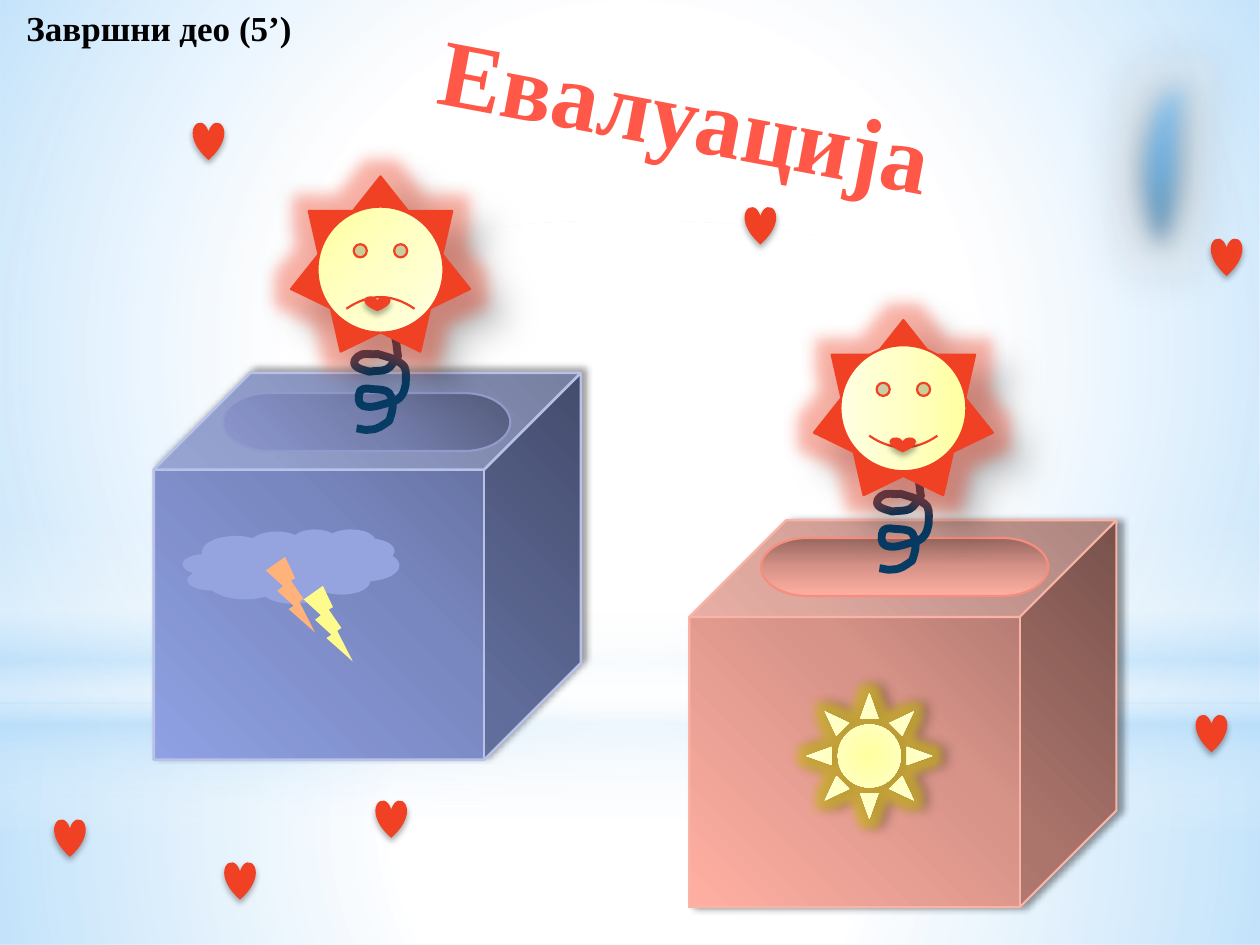
"""Build the evaluation slide: two jack-in-the-box toys, hearts and a title."""
from dataclasses import dataclass
from typing import Optional, Union

from lxml import etree
from pptx import Presentation
from pptx.dml.color import RGBColor
from pptx.enum.shapes import MSO_SHAPE
from pptx.enum.text import MSO_AUTO_SIZE, PP_ALIGN
from pptx.oxml.ns import nsdecls, qn
from pptx.util import Emu, Inches, Pt

RECTANGLE, OVAL, CUBE = MSO_SHAPE.RECTANGLE, MSO_SHAPE.OVAL, MSO_SHAPE.CUBE
SLOT, STAR, FACE = MSO_SHAPE.FLOWCHART_TERMINATOR, MSO_SHAPE.STAR_7_POINT, MSO_SHAPE.SMILEY_FACE
SUN, CLOUD, BOLT = MSO_SHAPE.SUN, MSO_SHAPE.CLOUD, MSO_SHAPE.LIGHTNING_BOLT
HEART, TEAR = MSO_SHAPE.HEART, MSO_SHAPE.TEAR
CENTER, LEFT = PP_ALIGN.CENTER, PP_ALIGN.LEFT
FIT_SHAPE = MSO_AUTO_SIZE.SHAPE_TO_FIT_TEXT
SLIDE_WIDTH, SLIDE_HEIGHT = Inches(10), Inches(7.5)
COLUMNS, ROWS = 100, 75


@dataclass(frozen=True)
class Gradient:
    """Stops of position, colour and optional opacity; no angle means radial."""
    stops: tuple
    angle: Optional[int] = None


@dataclass(frozen=True)
class Effects:
    """Shadow (opacity, blur, distance, direction), glow (colour, opacity, radius), soft edge."""
    shadow: Optional[tuple] = None
    glow: Optional[tuple] = None
    soft_edge: float = 0


@dataclass(frozen=True)
class Part:
    """One preset shape placed at column, row, width and height of the grid."""
    kind: int
    at: tuple
    fill: Union[str, Gradient]
    line: Optional[tuple] = None
    effects: Effects = Effects()
    adjustment: Optional[float] = None


@dataclass(frozen=True)
class Label:
    """One text box with its text, place, indent in columns and formats."""
    text: str
    at: tuple
    indent: float
    alignment: int
    color: Union[str, Gradient]
    font: dict
    rotation: float = 0


def ramp(colors: tuple, angle: Optional[int] = None) -> Gradient:
    """Spread colours evenly over a gradient."""
    step = 100 / (len(colors) - 1)
    return Gradient(tuple((step * index, color) for index, color in enumerate(colors)), angle)


@dataclass(frozen=True)
class Theme:
    """Colours, type formats and effects of the slide."""
    red: str = "F14124"
    navy: str = "073C65"
    black: str = "000000"
    white: str = "FFFFFF"
    sky: str = "B4DCFA"
    yellow: tuple = ("FFFFA0", "FFFFC5", "FFFFE3")
    blue_box: tuple = ("555F87", "7987C0", "8FA1E3")
    pink_box: tuple = ("976760", "D79388", "FFAFA2")
    blue_slot: tuple = ("535A7A", "7680AE", "8C97CF")
    tear: tuple = ("4E7897", "6FABD7", "84CAFF")
    title: tuple = ("FF6155", "FF5748", "EF3718", "FF5748", "FF6155")
    title_font = {"name": "Times New Roman", "size": Pt(54), "bold": True}
    header_font = {"name": "Times New Roman", "size": Pt(20), "bold": True}
    outline: float = 1.25
    spring_width: float = 4.5
    heart_effects: Effects = Effects((32, 3.5, 2.2, 90))
    star_effects: Effects = Effects((30, 15, 18, 45), ("F14124", 40, 18))
    sun_effects: Effects = Effects((40, 4, 3, 0), ("D4B928", 70, 10))
    tear_effects: Effects = Effects((43, 25, 0, 45), ("FFFFFF", 15, 15), 12.5)


THEME = Theme()
W, S = THEME.white, THEME.sky
RED_LINE = (THEME.red, THEME.outline)

BACKGROUND = (
    Part(RECTANGLE, (0, 55.8, 100, 19.2), Gradient(((0, W, 91), (37, W, 76), (100, S, 79)))),
    Part(RECTANGLE, (0, 0, 100, 55.8), Gradient(((0, W, 89), (48, W, 62), (100, S, 79)))),
    Part(RECTANGLE, (0, 41.2, 100, 25), Gradient(
        ((0, W, 0), (29, W, 30), (45, S, 40), (55, W, 26), (65, S, 60), (100, W, 0)), 90)),
    Part(OVAL, (0, 17.5, 100, 55.8), Gradient(((0, W, 100), (56, W, 0)))),
)
BOXES = (
    Part(CUBE, (12.2, 29.6, 33.9, 30.7), ramp(THEME.blue_box, 135), ("B8C2E9", 1.5),
         Effects((40, 4, 3, 315))),
    Part(CUBE, (54.7, 41.3, 33.9, 30.7), ramp(THEME.pink_box, 135), ("F9B3A7", THEME.outline),
         Effects((40, 4, 3, 0))),
    Part(SLOT, (60.4, 42.7, 22.8, 4.6), ramp(THEME.pink_box, 90), ("F78D7C", THEME.outline)),
    Part(SLOT, (17.7, 31.2, 22.8, 4.6), ramp(THEME.blue_slot, 135), ("919ACA", THEME.outline)),
)
FIGURES = (
    *(Part(STAR, (column, row, 14.2, 13.9), THEME.red, RED_LINE, THEME.star_effects)
      for column, row in ((23.1, 14), (64.6, 25.4))),
    Part(FACE, (25.2, 16.4, 10, 10), ramp(THEME.yellow, 45), RED_LINE, adjustment=-0.047),
    Part(FACE, (66.7, 27.4, 10, 10), ramp(THEME.yellow, 180), RED_LINE),
    Part(SUN, (64, 55, 10, 10), ramp(THEME.yellow), effects=THEME.sun_effects),
    Part(CLOUD, (14.5, 42, 17.2, 5.9), "95A4DE"),
    Part(BOLT, (24.1, 46.5, 3.9, 6), "FEFB8D"),
    Part(BOLT, (21.1, 44.2, 3.9, 6), "FFB37A"),
    *(Part(HEART, (column, row, 2.1, 1.2), THEME.red, effects=THEME.heart_effects)
      for column, row in ((70.6, 34.7), (28.9, 23.5))),
    *(Part(HEART, (column, row, 2.5, 3), THEME.red, effects=THEME.heart_effects)
      for column, row in ((15.3, 9.7), (17.8, 68.4), (29.8, 63.5), (59.1, 16.4),
                          (94.9, 56.7), (96.1, 18.9), (4.3, 65))),
)
TEARDROP = Part(TEAR, (89.3, 5.5, 5.6, 17), ramp(THEME.tear, 270), (W, 2.75),
                THEME.tear_effects, 1.72)
TITLE = Label("Евалуација", (13.9, 3.7, 78.3, 10.1), 2.8, CENTER,
              ramp(THEME.title, 90), THEME.title_font, 10.8)
HEADER = Label("Завршни део (5’)", (0, 0, 37.3, 4.4), 1.1, LEFT, THEME.black, THEME.header_font)

SPRING_PLACES = ((28.1, 26.4), (69.6, 37.5))
SPRING_SIZE = (4.1, 7.8)
SPRING_START = (0.2, 7.6)
SPRING_CURVES = (
    ((0.5, 7.6), (0.9, 7.8), (1.2, 7.7)), ((1.9, 7.7), (2.2, 7.4), (2.8, 7)),
    ((3, 6.3), (3.3, 5.7), (2.8, 4.8)), ((2.6, 4.5), (1.7, 4.5), (1.7, 4.5)),
    ((1.3, 4.5), (0.8, 4.3), (0.5, 4.6)), ((0.3, 5), (0.3, 5.7), (0.7, 5.8)),
    ((1.5, 6.1), (2.3, 5.6), (3.1, 5.5)), ((3.3, 5.4), (3.5, 5.3), (3.6, 5.2)),
    ((4, 4.8), (4, 4.5), (4.1, 4.1)), ((4.1, 3.7), (4.2, 3.1), (4, 2.7)),
    ((3.8, 2.4), (3.3, 2.2), (2.9, 2)), ((1.9, 1.7),),
    ((1.4, 1.8), (0.7, 1.5), (0.3, 1.9)), ((-0.7, 2.8), (1.1, 3), (1.2, 3.1)),
    ((1.7, 3), (2.2, 3.1), (2.6, 2.9)), ((2.9, 2.8), (3.3, 2.1), (3.5, 1.9)),
    ((3.4, 1.4), (3.4, 1), (3.3, 0.5)), ((3.2, 0.3), (3.1, 0), (3.1, 0)),
)


def grid(at: tuple) -> list:
    """Turn column and row figures into slide lengths."""
    units = (SLIDE_WIDTH / COLUMNS, SLIDE_HEIGHT / ROWS) * (len(at) // 2)
    return [Emu(round(value * unit)) for value, unit in zip(at, units)]


def color_xml(color: str, opacity: float = 100) -> str:
    """Describe a colour with its opacity in percent."""
    return f'<a:srgbClr val="{color}"><a:alpha val="{round(opacity * 1000)}"/></a:srgbClr>'


def gradient_element(gradient: Gradient):
    """Make the fill element of a linear or radial gradient."""
    stops = "".join(f'<a:gs pos="{round(position * 1000)}">{color_xml(*color)}</a:gs>'
                    for position, *color in gradient.stops)
    shade = ('<a:path path="circle"><a:fillToRect l="50000" t="50000" r="50000" b="50000"/></a:path>'
             if gradient.angle is None else f'<a:lin ang="{gradient.angle * 60000}" scaled="0"/>')
    return etree.fromstring(f'<a:gradFill {nsdecls("a")} rotWithShape="1">'
                            f'<a:gsLst>{stops}</a:gsLst>{shade}</a:gradFill>')


def add_effects(shape, effects: Effects) -> None:
    """Replace the theme effects of a shape by its own."""
    shape.shadow.inherit = False
    markup = ""
    if effects.glow:
        color, opacity, radius = effects.glow
        markup += f'<a:glow rad="{Pt(radius)}">{color_xml(color, opacity)}</a:glow>'
    if effects.shadow:
        opacity, blur, distance, direction = effects.shadow
        markup += (f'<a:outerShdw blurRad="{Pt(blur)}" dist="{Pt(distance)}" dir="{direction * 60000}" '
                   f'rotWithShape="0">{color_xml(THEME.black, opacity)}</a:outerShdw>')
    if effects.soft_edge:
        markup += f'<a:softEdge rad="{Pt(effects.soft_edge)}"/>'
    holder = shape._element.spPr.find(qn("a:effectLst"))
    holder.extend(etree.fromstring(f'<a:effectLst {nsdecls("a")}>{markup}</a:effectLst>'))


def set_line(shape, line: Optional[tuple]) -> None:
    """Give a shape its outline, or none."""
    if line is None:
        shape.line.fill.background()
        return
    color, width = line
    shape.line.color.rgb = RGBColor.from_string(color)
    shape.line.width = Pt(width)


def add_part(slide, part: Part) -> None:
    """Draw one preset shape."""
    shape = slide.shapes.add_shape(part.kind, *grid(part.at))
    if isinstance(part.fill, Gradient):
        shape.fill.background()
        properties = shape._element.spPr
        properties.replace(properties.find(qn("a:noFill")), gradient_element(part.fill))
    else:
        shape.fill.solid()
        shape.fill.fore_color.rgb = RGBColor.from_string(part.fill)
    set_line(shape, part.line)
    add_effects(shape, part.effects)
    if part.adjustment is not None:
        shape.adjustments[0] = part.adjustment


def add_spring(slide, place: tuple) -> None:
    """Draw one coiled spring as a curved outline inside its frame."""
    corner = tuple(start + size for start, size in zip(place, SPRING_SIZE))
    builder = slide.shapes.build_freeform(*grid(place))
    builder.add_line_segments([grid(corner)], close=False)
    spring = builder.convert_to_shape()
    outline = spring._element.spPr.find(".//" + qn("a:path"))
    for step in list(outline):
        outline.remove(step)
    for tag, points in (("moveTo", (SPRING_START,)),
                        *(("lnTo" if len(curve) == 1 else "cubicBezTo", curve)
                          for curve in SPRING_CURVES)):
        step = etree.SubElement(outline, qn(f"a:{tag}"))
        for point in points:
            x, y = grid(point)
            etree.SubElement(step, qn("a:pt"), x=str(int(x)), y=str(int(y)))
    spring.fill.background()
    set_line(spring, (THEME.navy, THEME.spring_width))
    add_effects(spring, Effects())


def add_label(slide, label: Label) -> None:
    """Write one line of text."""
    box = slide.shapes.add_textbox(*grid(label.at))
    box.rotation = label.rotation
    frame = box.text_frame
    margin = Inches(0.1) + grid((label.indent, 0))[0]
    for name, value in {"word_wrap": True, "auto_size": FIT_SHAPE, "margin_left": margin}.items():
        setattr(frame, name, value)
    paragraph = frame.paragraphs[0]
    paragraph.alignment = label.alignment
    run = paragraph.add_run()
    run.text = label.text
    for name, value in label.font.items():
        setattr(run.font, name, value)
    if isinstance(label.color, Gradient):
        run._r.get_or_add_rPr().insert(0, gradient_element(label.color))
    else:
        run.font.color.rgb = RGBColor.from_string(label.color)


def main() -> None:
    """Build and save the slide."""
    presentation = Presentation()
    presentation.slide_width, presentation.slide_height = SLIDE_WIDTH, SLIDE_HEIGHT
    slide = presentation.slides.add_slide(presentation.slide_layouts[6])
    for part in BACKGROUND:
        add_part(slide, part)
    add_label(slide, TITLE)
    for part in BOXES:
        add_part(slide, part)
    for place in SPRING_PLACES:
        add_spring(slide, place)
    for part in FIGURES:
        add_part(slide, part)
    add_label(slide, HEADER)
    add_part(slide, TEARDROP)
    presentation.save("out.pptx")


if __name__ == "__main__":
    main()
